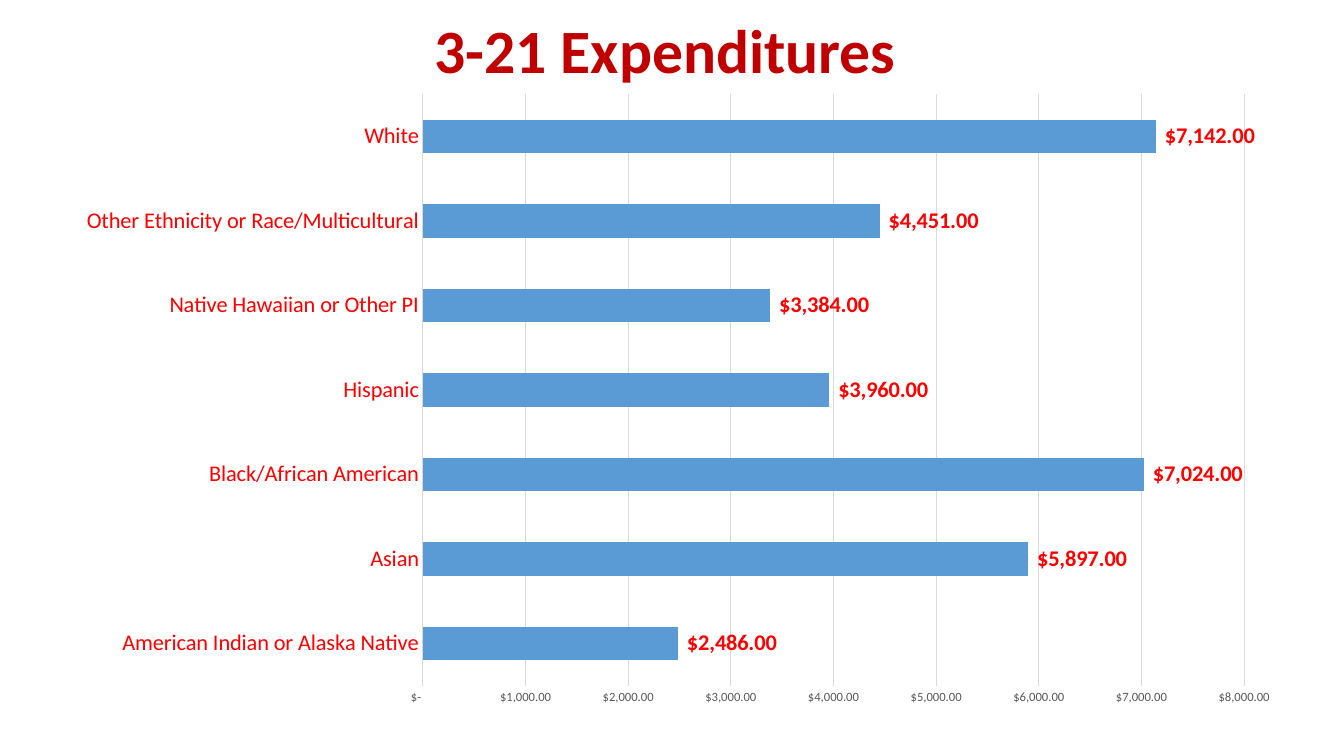
from lxml.etree import SubElement
from pptx import Presentation
from pptx.chart.data import CategoryChartData
from pptx.dml.color import RGBColor
from pptx.enum.chart import XL_CHART_TYPE, XL_LABEL_POSITION, XL_TICK_MARK
from pptx.enum.text import MSO_ANCHOR, PP_ALIGN
from pptx.oxml import parse_xml
from pptx.oxml.ns import nsdecls, qn
from pptx.util import Inches, Pt

MONEY = '_("$"* #,##0.00_);_("$"* \\(#,##0.00\\);_("$"* "-"??_);_(@_)'
SPEND = {
    "American Indian or Alaska Native": 2486,
    "Asian": 5897,
    "Black/African American": 7024,
    "Hispanic": 3960,
    "Native Hawaiian or Other PI": 3384,
    "Other Ethnicity or Race/Multicultural": 4451,
    "White": 7142,
}


def color(code):
    return RGBColor.from_string(code)


class Deck:
    face = "Calibri"
    title_red, red = "C00000", "FF0000"
    blue, gray, grid = "5B9BD5", "595959", "D9D9D9"

    def __init__(self):
        self.show = Presentation()
        self.show.slide_width = Inches(13.33)
        self.show.slide_height = Inches(7.5)
        self.slide = self.show.slides.add_slide(self.show.slide_layouts[6])

    def style(self, font, size, code, bold=False):
        font.name, font.size, font.bold = self.face, Pt(size), bold
        font.color.rgb = color(code)

    def title(self, text, *box):
        frame = self.slide.shapes.add_textbox(*map(Inches, box)).text_frame
        frame.word_wrap = True
        frame.vertical_anchor = MSO_ANCHOR.MIDDLE
        para = frame.paragraphs[0]
        para.alignment, para.line_spacing = PP_ALIGN.CENTER, 0.9
        run = para.add_run()
        run.text = text
        self.style(run.font, 44, self.title_red, True)

    def axis(self, axis, size, code):
        self.style(axis.tick_labels.font, size, code)
        axis.major_tick_mark = axis.minor_tick_mark = XL_TICK_MARK.NONE
        axis.format.line.fill.background()

    def place(self, chart, **part):
        # Fix the inner plot area as fractions of the chart
        plot = chart._chartSpace.chart.plotArea
        for old in plot.findall(qn("c:layout")):
            plot.remove(old)
        layout = parse_xml(f"<c:layout {nsdecls('c')}/>")
        manual = SubElement(layout, qn("c:manualLayout"))
        rules = {"layoutTarget": "inner", "xMode": "edge", "yMode": "edge"}
        for name, value in {**rules, **part}.items():
            SubElement(manual, qn(f"c:{name}")).set("val", str(value))
        plot.insert(0, layout)

    def bars(self, values, *box):
        data = CategoryChartData(number_format=MONEY)
        data.categories = list(values)
        data.add_series("Series 1", list(values.values()))
        chart = self.slide.shapes.add_chart(
            XL_CHART_TYPE.BAR_CLUSTERED, *map(Inches, box), data).chart
        chart.has_legend = chart.has_title = False
        self.style(chart.font, 10, "000000")
        self.place(chart, x=0.298, y=0, w=0.666, h=0.952)

        # Bars and their labels
        plot = chart.plots[0]
        plot.gap_width, plot.vary_by_categories = 150, False
        fill = plot.series[0].format.fill
        fill.solid()
        fill.fore_color.rgb = color(self.blue)
        plot.has_data_labels = True
        labels = plot.data_labels
        labels.show_value = True
        labels.position = XL_LABEL_POSITION.OUTSIDE_END
        labels.number_format, labels.number_format_is_linked = MONEY, False
        self.style(labels.font, 16, self.red, True)

        # Axes and gridlines
        self.axis(chart.category_axis, 16, self.red)
        scale = chart.value_axis
        self.axis(scale, 9, self.gray)
        scale.minimum_scale, scale.maximum_scale = 0, 8000
        scale.major_unit = 1000
        scale.tick_labels.number_format = MONEY
        scale.tick_labels.number_format_is_linked = False
        line = scale.major_gridlines.format.line
        line.width, line.color.rgb = Pt(0.75), color(self.grid)


def main():
    deck = Deck()
    deck.title("3-21 Expenditures", 0.85, 0.14, 11.5, 0.79)
    deck.bars(SPEND, 0.55, 0.93, 12.23, 6.17)
    deck.show.save("out.pptx")


if __name__ == "__main__":
    main()
